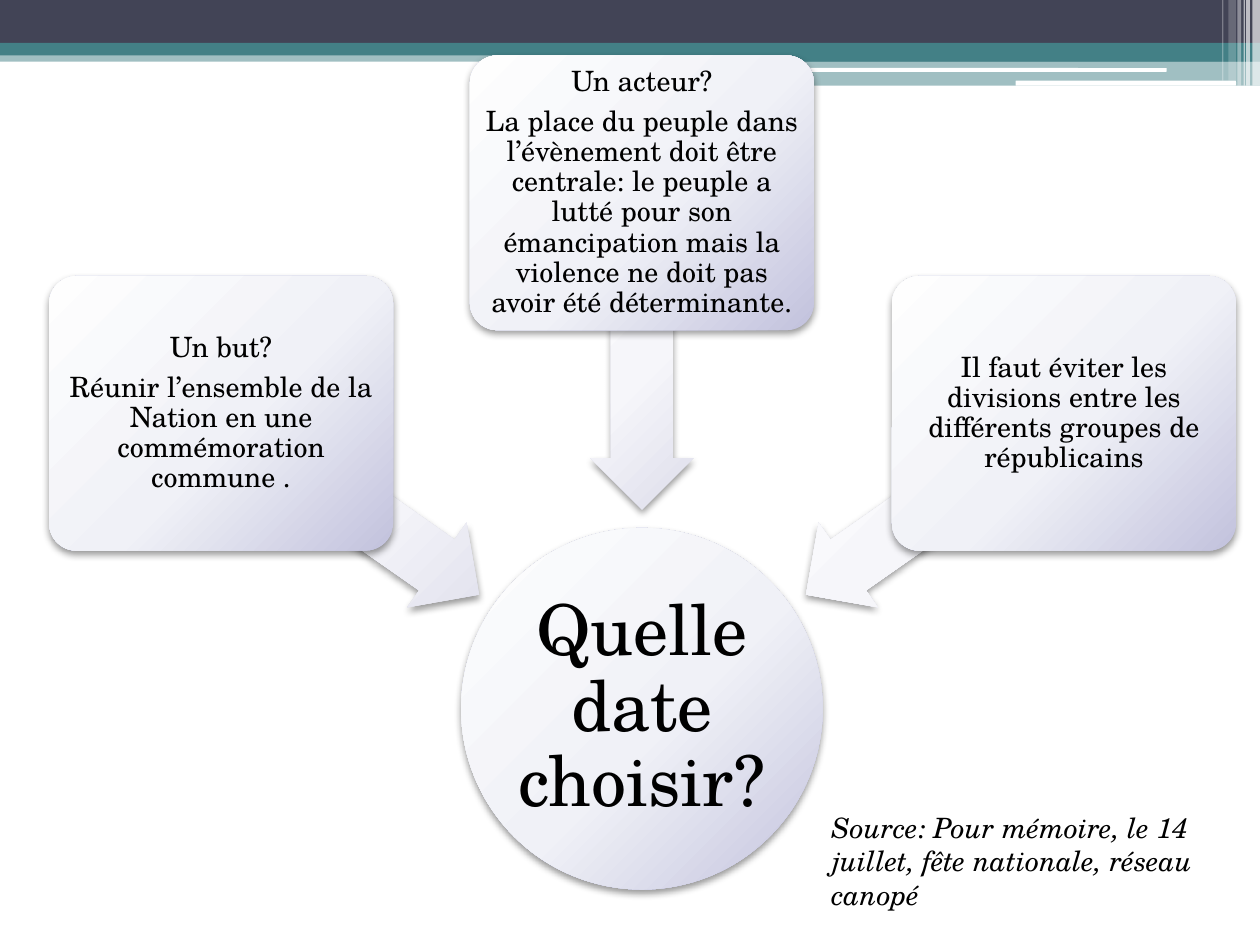
from dataclasses import dataclass

from lxml.etree import SubElement
from pptx import Presentation
from pptx.dml.color import RGBColor
from pptx.enum.shapes import MSO_SHAPE
from pptx.enum.text import MSO_ANCHOR, MSO_AUTO_SIZE, PP_ALIGN
from pptx.oxml import parse_xml
from pptx.oxml.ns import nsdecls, qn
from pptx.util import Inches, Pt

FONT = "TeX Gyre Schola"
TEAL = "438086"
WHITE = "FFFFFF"
CARD_STOPS = ((0, "FEFEFE"), (55, "F0F1F7"), (100, "C2C2DD"))
ARROW_STOPS = ((0, "FEFEFF"), (55, "F6F6FA"), (100, "DDDDEB"))


@dataclass
class Band:
    left: float
    top: float
    width: float
    height: float
    color: str
    opacity: int = 100
    kind: MSO_SHAPE = MSO_SHAPE.RECTANGLE


@dataclass
class Card:
    left: float
    top: float
    paragraphs: tuple[str, ...]
    arrow_left: float
    arrow_top: float
    arrow_rotation: int


BANDS = [
    Band(0, 0.4, 10, 0.09, TEAL, 50),
    Band(0, 0, 10, 0.34, "424456"),
    Band(0, 0.34, 10, 0.1, TEAL),
    Band(5.92, 0.39, 4.08, 0.1, TEAL),
    Band(5.92, 0.48, 4.08, 0.2, TEAL, 50),
    Band(5.91, 0.54, 3.35, 0.03, WHITE, kind=MSO_SHAPE.ROUNDED_RECTANGLE),
    Band(8.06, 0.64, 1.75, 0.04, WHITE, kind=MSO_SHAPE.ROUNDED_RECTANGLE),
    Band(9.94, 0, 0.06, 0.68, WHITE, 65),
    Band(9.89, 0, 0.03, 0.68, WHITE, 65),
    Band(9.87, 0, 0.01, 0.68, WHITE, 60),
    Band(9.82, 0, 0.03, 0.68, WHITE, 40),
    Band(9.75, 0, 0.06, 0.64, WHITE, 20),
    Band(9.7, 0, 0.01, 0.64, WHITE, 30),
]

CARDS = [
    Card(0.39, 2.19, (
        "Un but?",
        "Réunir l’ensemble de la Nation en une commémoration commune .",
    ), 1.52, 3.59, 215),
    Card(3.73, 0.44, (
        "Un acteur?",
        "La place du peuple dans l’évènement doit être centrale: le peuple a lutté "
        "pour son émancipation mais la violence ne doit pas avoir été déterminante.",
    ), 3.84, 2.38, 270),
    Card(7.08, 2.19, (
        "Il faut éviter les divisions entre les différents groupes de républicains",
    ), 6.17, 3.59, 325),
]


def rgb(color: str) -> RGBColor:
    return RGBColor.from_string(color)


def add_plain_shape(slide, kind: MSO_SHAPE, left: float, top: float, width: float, height: float):
    shape = slide.shapes.add_shape(kind, Inches(left), Inches(top), Inches(width), Inches(height))
    shape.shadow.inherit = False
    shape.line.fill.background()
    return shape


def add_band(slide, band: Band) -> None:
    shape = add_plain_shape(slide, band.kind, band.left, band.top, band.width, band.height)
    shape.fill.solid()
    shape.fill.fore_color.rgb = rgb(band.color)
    if band.opacity < 100:
        color = shape.fill._xPr.find(qn("a:solidFill")).find(qn("a:srgbClr"))
        SubElement(color, qn("a:alpha"), val=str(band.opacity * 1000))


def add_glossy_shape(slide, kind: MSO_SHAPE, left: float, top: float,
                     width: float, height: float, stops: tuple):
    shape = add_plain_shape(slide, kind, left, top, width, height)
    shape.fill.background()
    properties = shape.element.spPr
    stop_xml = "".join(
        f'<a:gs pos="{position * 1000}"><a:srgbClr val="{color}"/></a:gs>'
        for position, color in stops
    )
    gradient = parse_xml(
        f'<a:gradFill {nsdecls("a")} rotWithShape="1"><a:gsLst>{stop_xml}</a:gsLst>'
        '<a:path path="circle"><a:fillToRect l="-40000" t="-90000" r="140000" b="190000"/>'
        '</a:path></a:gradFill>'
    )
    properties.replace(properties.find(qn("a:noFill")), gradient)
    shadow = parse_xml(
        f'<a:outerShdw {nsdecls("a")} blurRad="{Pt(4.1)}" dist="{Pt(2)}" dir="5400000" '
        'rotWithShape="0"><a:srgbClr val="000000"><a:alpha val="40000"/></a:srgbClr></a:outerShdw>'
    )
    properties.find(qn("a:effectLst")).append(shadow)
    return shape


def format_font(paragraph, size: float, italic: bool = False) -> None:
    for run in paragraph.runs:
        run.font.name = FONT
        run.font.size = Pt(size)
        run.font.italic = italic
        run.font.color.rgb = rgb("000000")


def write_centered(shape, paragraphs: tuple[str, ...], size: float) -> None:
    frame = shape.text_frame
    frame.word_wrap = True
    frame.vertical_anchor = MSO_ANCHOR.MIDDLE
    frame.margin_left = frame.margin_right = Inches(0.03)
    frame.margin_top = frame.margin_bottom = Inches(0.03)
    frame.text = "\n".join(paragraphs)
    for paragraph in frame.paragraphs:
        paragraph.alignment = PP_ALIGN.CENTER
        paragraph.line_spacing = 0.9
        paragraph.space_after = Pt(size * 0.35)
        format_font(paragraph, size)


def add_card(slide, card: Card) -> None:
    arrow = add_glossy_shape(slide, MSO_SHAPE.LEFT_ARROW, card.arrow_left, card.arrow_top,
                             2.51, 0.82, ARROW_STOPS)
    arrow.adjustments[0] = 0.6
    arrow.adjustments[1] = 0.5
    arrow.rotation = card.arrow_rotation
    box = add_glossy_shape(slide, MSO_SHAPE.ROUNDED_RECTANGLE, card.left, card.top,
                           2.73, 2.18, CARD_STOPS)
    box.adjustments[0] = 0.1
    write_centered(box, card.paragraphs, 16)


def add_source(slide) -> None:
    box = slide.shapes.add_textbox(Inches(6.5), Inches(6.38), Inches(3.5), Inches(0.91))
    frame = box.text_frame
    frame.word_wrap = True
    frame.auto_size = MSO_AUTO_SIZE.SHAPE_TO_FIT_TEXT
    frame.text = "Source: Pour mémoire, le 14 juillet, fête nationale, réseau canopé"
    format_font(frame.paragraphs[0], 16, italic=True)


def main() -> None:
    presentation = Presentation()
    presentation.slide_width = Inches(10)
    presentation.slide_height = Inches(7.5)
    slide = presentation.slides.add_slide(presentation.slide_layouts[6])
    for band in BANDS:
        add_band(slide, band)
    question = add_glossy_shape(slide, MSO_SHAPE.OVAL, 3.66, 4.19, 2.87, 2.87, CARD_STOPS)
    write_centered(question, ("Quelle date choisir?",), 40)
    for card in CARDS:
        add_card(slide, card)
    add_source(slide)
    presentation.save("out.pptx")


if __name__ == "__main__":
    main()
